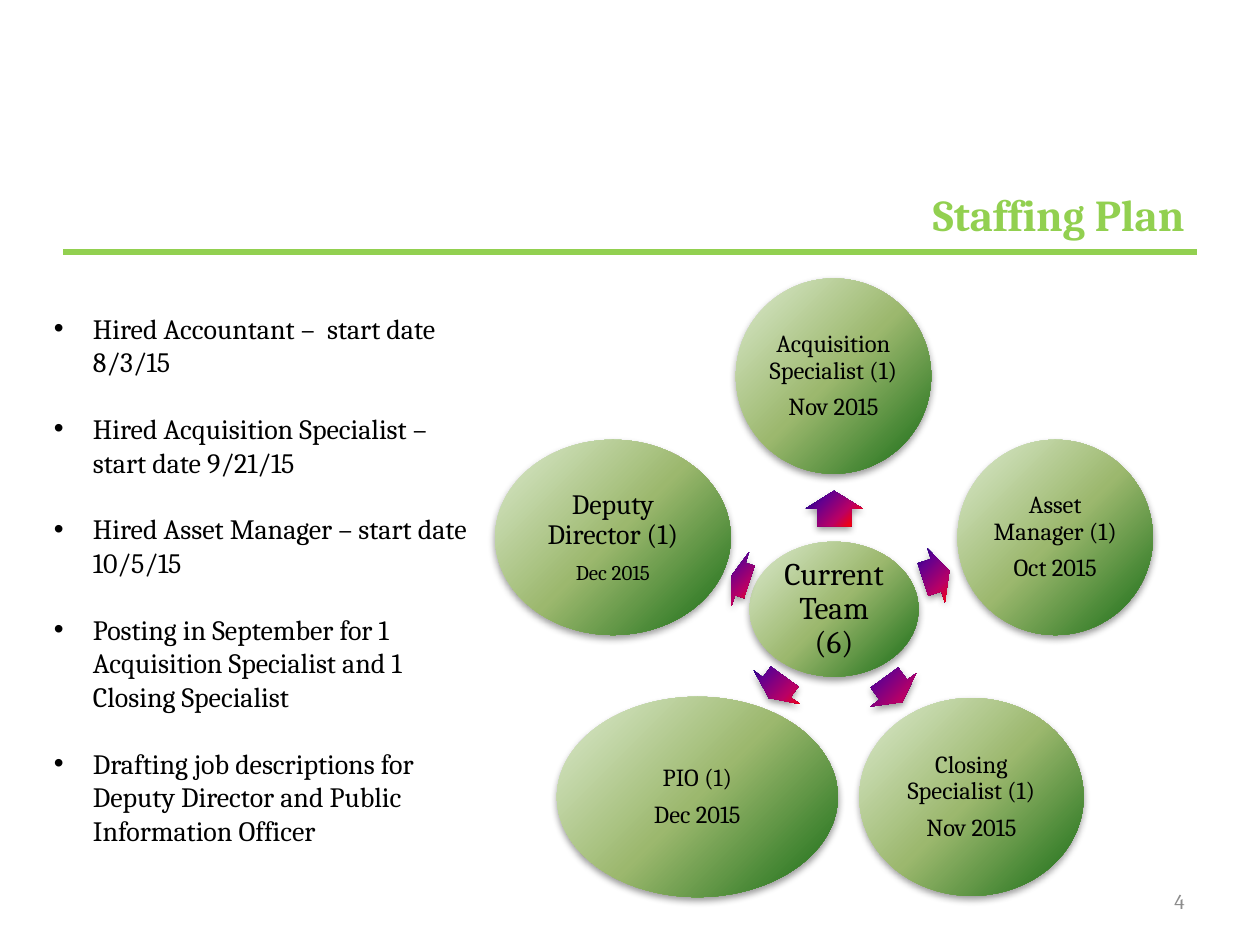
from pptx import Presentation
from pptx.dml.color import RGBColor
from pptx.enum.shapes import MSO_CONNECTOR, MSO_SHAPE
from pptx.enum.text import MSO_ANCHOR, PP_ALIGN
from pptx.oxml import parse_xml
from pptx.oxml.ns import nsdecls
from pptx.util import Inches, Pt

OVAL, ARROW = MSO_SHAPE.OVAL, MSO_SHAPE.RIGHT_ARROW
STRAIGHT = MSO_CONNECTOR.STRAIGHT
TOP, MIDDLE, BOTTOM = MSO_ANCHOR.TOP, MSO_ANCHOR.MIDDLE, MSO_ANCHOR.BOTTOM
LEFT, CENTER, RIGHT = PP_ALIGN.LEFT, PP_ALIGN.CENTER, PP_ALIGN.RIGHT

FONT = "Cambria"
LIME, BLACK, GRAY = "92D050", "000000", "8C8C8C"
GREENS = [(0, "DDEBCF"), (50, "9CB86E"), (100, "156B13")]
SUNSET = [(0, "000082"), (30, "66008F"), (65, "BA0066"), (90, "FF0000"), (100, "FF8200")]
GRADIENT_ANGLE = 45

CIRCLES = [
    (5.95, 4.3, 1.34, 1.07, 0.03, [("Current Team (6)", 18)]),
    (5.84, 2.21, 1.55, 1.55, 0.02, [("Acquisition Specialist (1)", 14), ("Nov 2015", 14)]),
    (7.6, 3.49, 1.55, 1.55, 0, [("Asset Manager (1)", 14), ("Oct 2015", 14)]),
    (6.82, 5.54, 1.78, 1.57, 0.02, [("Closing Specialist (1)", 14), ("Nov 2015", 14)]),
    (4.42, 5.53, 2.23, 1.59, 0.02, [("PIO (1)", 14), ("Dec 2015", 14)]),
    (3.93, 3.49, 1.87, 1.55, 0.02, [("Deputy Director (1)", 16), ("Dec 2015", 12)]),
]
ARROWS = [
    (6.48, 3.81, 0.28, 270),
    (7.32, 4.34, 0.22, 342),
    (6.97, 5.25, 0.24, 54),
    (6.06, 5.23, 0.21, 126),
    (5.8, 4.37, 0.15, 198),
]
UPDATES = [
    "Hired Accountant –  start date 8/3/15",
    "Hired Acquisition Specialist – start date 9/21/15",
    "Hired Asset Manager – start date 10/5/15",
    "Posting in September for 1 Acquisition Specialist and 1 Closing Specialist",
    "Drafting job descriptions for Deputy Director and Public Information Officer",
]


def rgb(color):
    return RGBColor.from_string(color)


def set_attrs(obj, formats):
    for name, value in formats.items():
        setattr(obj, name, value)


def write(p, text, size, color=BLACK, bold=False):
    r = p.add_run()
    r.text = text
    set_attrs(r.font, {"name": FONT, "size": Pt(size), "bold": bold})
    r.font.color.rgb = rgb(color)


def add_paragraph(tf, index):
    return tf.add_paragraph() if index else tf.paragraphs[0]


def add_text_box(s, box, anchor, align):
    tf = s.shapes.add_textbox(*map(Inches, box)).text_frame
    set_attrs(tf, {"word_wrap": True, "vertical_anchor": anchor})
    tf.paragraphs[0].alignment = align
    return tf


def add_gradient_shape(s, kind, box, stops, rotation=0):
    sp = s.shapes.add_shape(kind, *map(Inches, box))
    sp.rotation = rotation
    angle = (GRADIENT_ANGLE - rotation) % 360 * 60000
    stop_xml = "".join(
        f'<a:gs pos="{pos * 1000}"><a:srgbClr val="{color}"/></a:gs>' for pos, color in stops
    )
    sp.element.spPr.append(parse_xml(
        f'<a:gradFill {nsdecls("a")} rotWithShape="1"><a:gsLst>{stop_xml}</a:gsLst>'
        f'<a:lin ang="{angle}" scaled="0"/></a:gradFill>'
    ))
    sp.line.fill.background()
    sp.element.spPr.append(parse_xml(
        f'<a:effectLst {nsdecls("a")}><a:outerShdw blurRad="{Pt(4.1)}" dist="{Pt(2)}" '
        'dir="5400000" rotWithShape="0"><a:srgbClr val="000000"><a:alpha val="40000"/>'
        '</a:srgbClr></a:outerShdw></a:effectLst>'
    ))
    return sp


def add_circle(s, left, top, width, height, inset, lines):
    sp = add_gradient_shape(s, OVAL, (left, top, width, height), GREENS)
    tf = sp.text_frame
    set_attrs(tf, {"word_wrap": True, "vertical_anchor": MIDDLE})
    set_attrs(tf, {f"margin_{side}": Inches(inset) for side in ("left", "top", "right", "bottom")})
    for i, (text, size) in enumerate(lines):
        p = add_paragraph(tf, i)
        set_attrs(p, {"alignment": CENTER, "line_spacing": 0.9, "space_after": Pt(0.4 * size)})
        write(p, text, size)


def add_arrow(s, left, top, width, rotation):
    sp = add_gradient_shape(s, ARROW, (left, top, width, 0.45), SUNSET, rotation)
    sp.adjustments[0] = 0.6
    sp.adjustments[1] = 0.5


def add_bullets(s, box, items):
    tf = add_text_box(s, box, TOP, LEFT)
    for i, text in enumerate(items):
        p = add_paragraph(tf, i)
        pPr = p._p.get_or_add_pPr()
        pPr.set("marL", str(Inches(0.31)))
        pPr.set("indent", str(Inches(-0.31)))
        pPr.append(parse_xml(f'<a:buFont {nsdecls("a")} typeface="Arial"/>'))
        pPr.append(parse_xml(f'<a:buChar {nsdecls("a")} char="•"/>'))
        if i:
            p.space_before = Pt(19)
        write(p, text, 16)


def add_rule(s):
    line = s.shapes.add_connector(STRAIGHT, Inches(0.5), Inches(2), Inches(9.5), Inches(2))
    line.line.color.rgb = rgb(LIME)
    line.line.width = Pt(3)
    line.element.spPr.append(parse_xml(f'<a:effectLst {nsdecls("a")}/>'))


def main():
    prs = Presentation()
    set_attrs(prs, {"slide_width": Inches(10), "slide_height": Inches(7.5)})
    s = prs.slides.add_slide(prs.slide_layouts[6])
    add_rule(s)
    title = add_text_box(s, (0.5, 1, 9, 1), BOTTOM, RIGHT)
    title.margin_bottom = Inches(0.09)
    write(title.paragraphs[0], "Staffing Plan", 25.2, LIME, True)
    for circle in CIRCLES:
        add_circle(s, *circle)
    for arrow in ARROWS:
        add_arrow(s, *arrow)
    add_bullets(s, (0.33, 2.42, 3.5, 4.41), UPDATES)
    number = add_text_box(s, (7.17, 6.95, 2.33, 0.4), MIDDLE, RIGHT)
    write(number.paragraphs[0], "4", 12, GRAY)
    prs.save("out.pptx")


if __name__ == "__main__":
    main()
